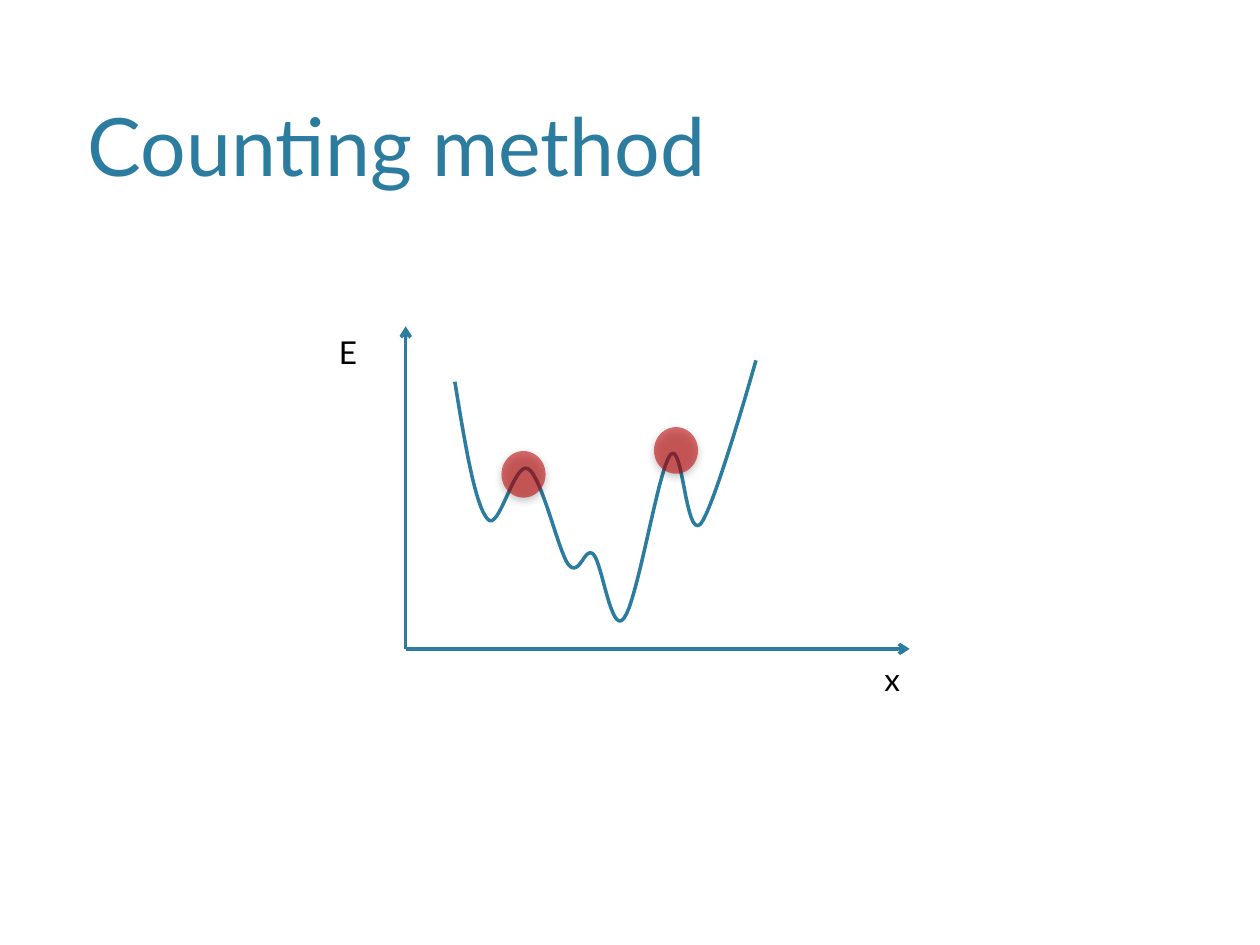
from lxml.etree import SubElement
from pptx import Presentation
from pptx.dml.color import RGBColor
from pptx.enum.shapes import MSO_CONNECTOR, MSO_SHAPE
from pptx.enum.text import MSO_ANCHOR, MSO_AUTO_SIZE
from pptx.oxml.ns import qn
from pptx.util import Inches, Pt

COLUMNS, ROWS = 100, 75
COLORS = {"teal": "2C7C9F", "red": "C00000", "black": "000000"}
ORIGIN = (32.2, 51.5)
AXIS_ENDS = [(32.2, 25.9), (72.2, 51.5)]
CURVE_START = (36.1, 30.3)
CURVE_SEGMENTS = [
    [(36.9, 35.2), (37.7, 40.1), (38.7, 41.2)],
    [(39.6, 42.3), (40.8, 36.6), (41.9, 37.2)],
    [(43, 37.8), (44.3, 43.7), (45.1, 44.8)],
    [(46, 45.9), (46.4, 43.3), (47.1, 44)],
    [(47.8, 44.7), (48.5, 50.4), (49.5, 49.1)],
    [(50.6, 47.8), (52.2, 37.4), (53.2, 36.1)],
    [(54.2, 34.9), (54.4, 42.8), (55.6, 41.6)],
    [(56.7, 40.3), (60, 28.6), (60, 28.6)],
]
BARRIERS = [(39.8, 35.8), (51.9, 33.9)]


def bezier_points(start, segments, steps=16):
    for first, second, end in segments:
        for step in range(1, steps + 1):
            t = step / steps
            weights = ((1 - t) ** 3, 3 * t * (1 - t) ** 2, 3 * t * t * (1 - t), t ** 3)
            yield tuple(
                sum(weight * value for weight, value in zip(weights, axis))
                for axis in zip(start, first, second, end)
            )
        start = end


class SlideBuilder:
    font_name = "Lato"
    line_width = Pt(2)

    def __init__(self, presentation):
        self.slide = presentation.slides.add_slide(presentation.slide_layouts[6])
        self.column = presentation.slide_width / COLUMNS
        self.row = presentation.slide_height / ROWS

    def place(self, *values):
        units = (self.column, self.row) * 2
        return [round(value * unit) for value, unit in zip(values, units)]

    def color(self, name):
        return RGBColor.from_string(COLORS[name])

    def apply(self, target, values):
        for name, value in values.items():
            setattr(target, name, value)

    def text(self, content, box, size, color, anchor=MSO_ANCHOR.TOP):
        shape = self.slide.shapes.add_textbox(*self.place(*box))
        frame = shape.text_frame
        self.apply(frame, {"word_wrap": True, "vertical_anchor": anchor,
                           "auto_size": MSO_AUTO_SIZE.NONE})
        run = frame.paragraphs[0].add_run()
        run.text = content
        self.apply(run.font, {"name": self.font_name, "size": Pt(size)})
        run.font.color.rgb = self.color(color)

    def stroke(self, line):
        line.color.rgb = self.color("teal")
        line.width = self.line_width

    def arrow(self, start, end):
        connector = self.slide.shapes.add_connector(
            MSO_CONNECTOR.STRAIGHT, *self.place(*start, *end))
        self.stroke(connector.line)
        SubElement(connector.line._get_or_add_ln(), qn("a:tailEnd"), type="arrow")
        SubElement(connector._element.spPr, qn("a:effectLst"))

    def curve(self, start, segments):
        builder = self.slide.shapes.build_freeform(*self.place(*start))
        points = [self.place(*point) for point in bezier_points(start, segments)]
        builder.add_line_segments(points, close=False)
        shape = builder.convert_to_shape()
        shape.shadow.inherit = False
        shape.fill.background()
        self.stroke(shape.line)

    def marker(self, left, top):
        shape = self.slide.shapes.add_shape(
            MSO_SHAPE.OVAL, *self.place(left, top, 3.5, 3.7))
        shape.fill.solid()
        shape.fill.fore_color.rgb = self.color("red")
        shape.line.fill.background()
        shape.shadow.inherit = False
        properties = shape._element.spPr
        fill_color = properties.find(qn("a:solidFill")).find(qn("a:srgbClr"))
        SubElement(fill_color, qn("a:alpha"), val="57000")
        shadow = SubElement(
            properties.find(qn("a:effectLst")), qn("a:outerShdw"),
            blurRad=str(Pt(5)), dist=str(Pt(2)), dir="5400000", rotWithShape="0")
        shadow_color = SubElement(shadow, qn("a:srgbClr"), val=COLORS["black"])
        SubElement(shadow_color, qn("a:alpha"), val="40000")


def main():
    presentation = Presentation()
    presentation.slide_width = Inches(10)
    presentation.slide_height = Inches(7.5)
    builder = SlideBuilder(presentation)
    builder.text("Counting method", (6, 1.2, 88, 14.6), 46, "teal", MSO_ANCHOR.BOTTOM)
    for end in AXIS_ENDS:
        builder.arrow(ORIGIN, end)
    builder.curve(CURVE_START, CURVE_SEGMENTS)
    builder.text("E", (25.9, 25.9, 4.1, 4.2), 18, "black")
    builder.text("x", (69.2, 51.9, 5.2, 4), 18, "black")
    for left, top in BARRIERS:
        builder.marker(left, top)
    presentation.save("out.pptx")


if __name__ == "__main__":
    main()
